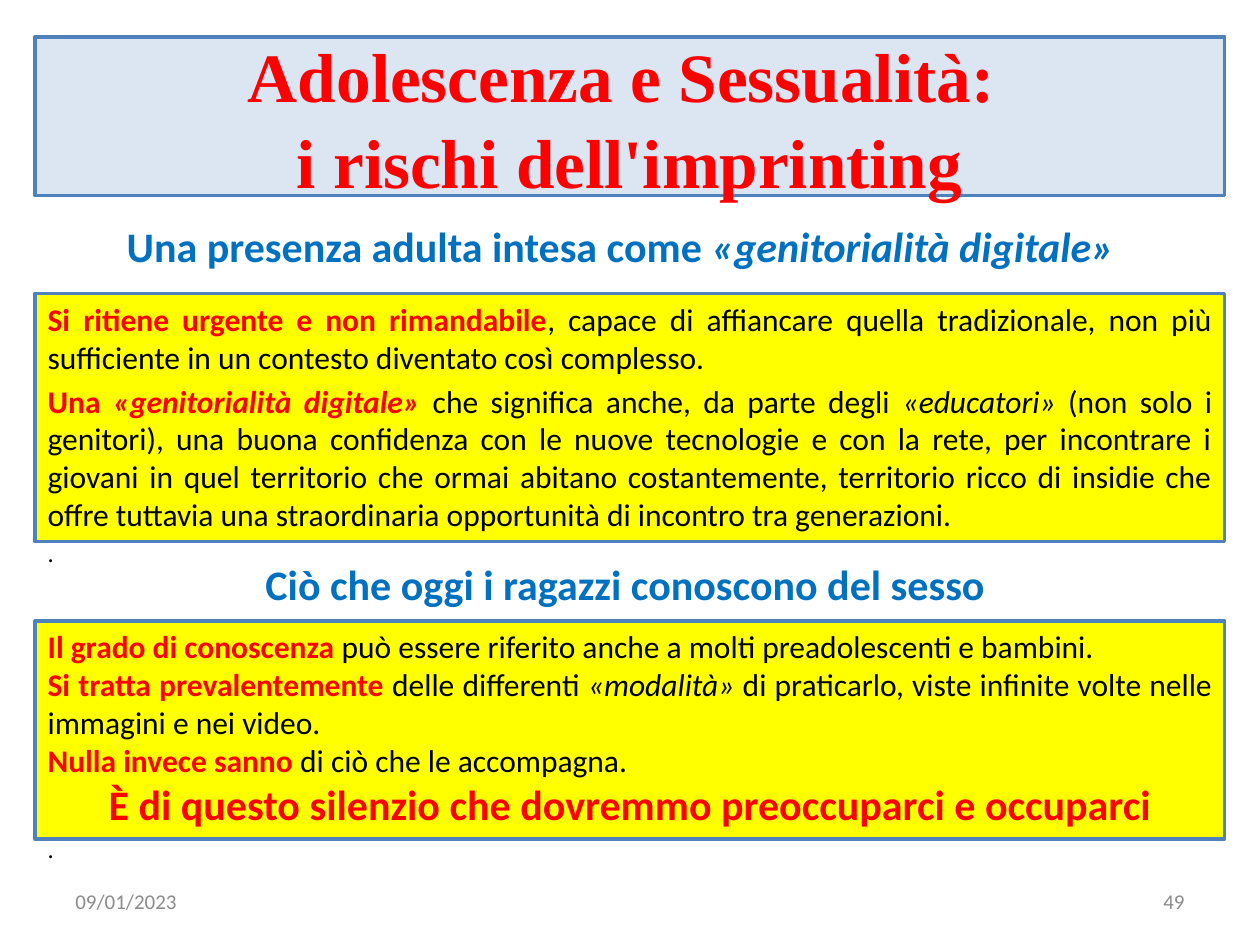
import pptx
import pptx.util
from pptx.dml.color import RGBColor
from pptx.enum.shapes import MSO_SHAPE
from pptx.enum.text import MSO_ANCHOR, PP_ALIGN

RED = RGBColor(0xFF, 0x00, 0x00)
BLACK = RGBColor(0x00, 0x00, 0x00)
BLUE = RGBColor(0x00, 0x70, 0xC0)
GREY = RGBColor(0x8C, 0x8C, 0x8C)
YELLOW = RGBColor(0xFF, 0xFF, 0x00)
PALE_BLUE = RGBColor(0xDC, 0xE6, 0xF2)
BORDER = RGBColor(0x4F, 0x81, 0xBD)

WIDTH, HEIGHT = 10, 7.5
MARGIN = 0.028  # panel margin, share of the width

# Run styles: colour, bold, italic
KEY = (RED, True, False)
KEY_ITALIC = (RED, True, True)
BODY = (BLACK, False, False)
ITALIC = (BLACK, False, True)
HEAD = (BLUE, True, False)
HEAD_ITALIC = (BLUE, True, True)
FOOT = (GREY, False, False)


class Deck:
    """Style and current slide; lengths are shares of the slide's size."""

    def __init__(self):
        self.prs = pptx.Presentation()
        self.prs.slide_width = pptx.util.Inches(WIDTH)
        self.prs.slide_height = pptx.util.Inches(HEIGHT)
        self.s = self.prs.slides.add_slide(self.prs.slide_layouts[6])

    def box(self, x, y, w, h):
        return (int(x * self.prs.slide_width), int(y * self.prs.slide_height),
                int(w * self.prs.slide_width), int(h * self.prs.slide_height))

    def panel(self, y, h, fill, anchor=MSO_ANCHOR.TOP):
        """Bordered rectangle between the side margins."""
        sp = self.s.shapes.add_shape(MSO_SHAPE.RECTANGLE,
                                     *self.box(MARGIN, y, 1 - 2 * MARGIN, h))
        sp.shadow.inherit = False
        sp.fill.solid()
        sp.fill.fore_color.rgb = fill
        sp.line.color.rgb = BORDER
        sp.line.width = pptx.util.Pt(2)
        return self.frame(sp, anchor)

    def text(self, x, y, w, h, anchor=MSO_ANCHOR.TOP):
        return self.frame(self.s.shapes.add_textbox(*self.box(x, y, w, h)), anchor)

    def frame(self, sp, anchor):
        tf = sp.text_frame
        tf.word_wrap = True
        tf.vertical_anchor = anchor
        return tf

    def para(self, tf, runs, size=18, align=PP_ALIGN.JUSTIFY, before=0, font="Calibri"):
        """Fill the first empty paragraph or append one; None is a line break."""
        p = tf.paragraphs[0]
        if p.runs:
            p = tf.add_paragraph()
        p.alignment = align
        p.space_before = pptx.util.Pt(before)
        for run in runs:
            if run is None:
                p.add_line_break()
                continue
            r = p.add_run()
            r.text, (r.font.color.rgb, r.font.bold, r.font.italic) = run
            r.font.size = pptx.util.Pt(size)
            r.font.name = font
        return p


def main():
    deck = Deck()

    # Title
    tf = deck.panel(0.039, 0.168, PALE_BLUE, MSO_ANCHOR.MIDDLE)
    p = deck.para(tf, [("Adolescenza e Sessualità: ", KEY), None,
                       ("i rischi dell'imprinting", KEY)],
                  39.6, PP_ALIGN.CENTER, font="Times New Roman")
    p.line_spacing = 1.04

    # Section headings
    headings = [
        (1.7, [("Una presenza adulta intesa come ", HEAD),
               ("«genitorialità digitale»  ", HEAD_ITALIC)]),
        (4.38, [("Ciò che oggi i ragazzi conoscono del sesso ", HEAD)]),
    ]
    for top, runs in headings:
        deck.para(deck.text(0, top / HEIGHT, 1, 0.067), runs, 24, PP_ALIGN.CENTER)

    # Digital parenting panel
    tf = deck.panel(2.33 / HEIGHT, 1.97 / HEIGHT, YELLOW)
    deck.para(tf, [
        ("Si ritiene urgente e non rimandabile", KEY),
        (", capace di affiancare quella tradizionale, non più sufficiente in un "
         "contesto diventato così complesso. ", BODY)], before=3.6)
    deck.para(tf, [
        ("Una ", KEY),
        ("«genitorialità digitale»", KEY_ITALIC),
        (" che significa anche, da parte degli ", BODY),
        ("«educatori»", ITALIC),
        (" (non solo i genitori), una buona confidenza con le nuove tecnologie e "
         "con la rete, per incontrare i giovani in quel territorio che ormai "
         "abitano costantemente, territorio ricco di insidie che offre tuttavia "
         "una straordinaria opportunità di incontro tra generazioni. ", BODY)],
        before=3.6)
    deck.para(tf, [(".", BODY)], 14, before=2.8)

    # What teenagers know panel
    tf = deck.panel(4.93 / HEIGHT, 1.73 / HEIGHT, YELLOW)
    deck.para(tf, [
        ("Il grado di conoscenza ", KEY),
        ("può essere riferito anche a molti preadolescenti e bambini. ", BODY)])
    deck.para(tf, [
        ("Si tratta prevalentemente ", KEY),
        ("delle differenti ", BODY),
        ("«modalità»", ITALIC),
        (" di praticarlo, viste infinite volte nelle immagini e nei video.", BODY)])
    deck.para(tf, [("Nulla invece sanno ", KEY),
                   ("di ciò che le accompagna. ", BODY)])
    deck.para(tf, [("È di questo silenzio che dovremmo preoccuparci e occuparci", KEY)],
              24, PP_ALIGN.CENTER)
    deck.para(tf, [(".", BODY)], 14, before=2.8)

    # Footer: date and slide number
    for x, label, align in [(0.05, "09/01/2023", PP_ALIGN.JUSTIFY),
                            (0.717, "49", PP_ALIGN.RIGHT)]:
        tf = deck.text(x, 6.95 / HEIGHT, 0.233, 0.053, MSO_ANCHOR.MIDDLE)
        deck.para(tf, [(label, FOOT)], 12, align)

    deck.prs.save("out.pptx")


if __name__ == "__main__":
    main()
